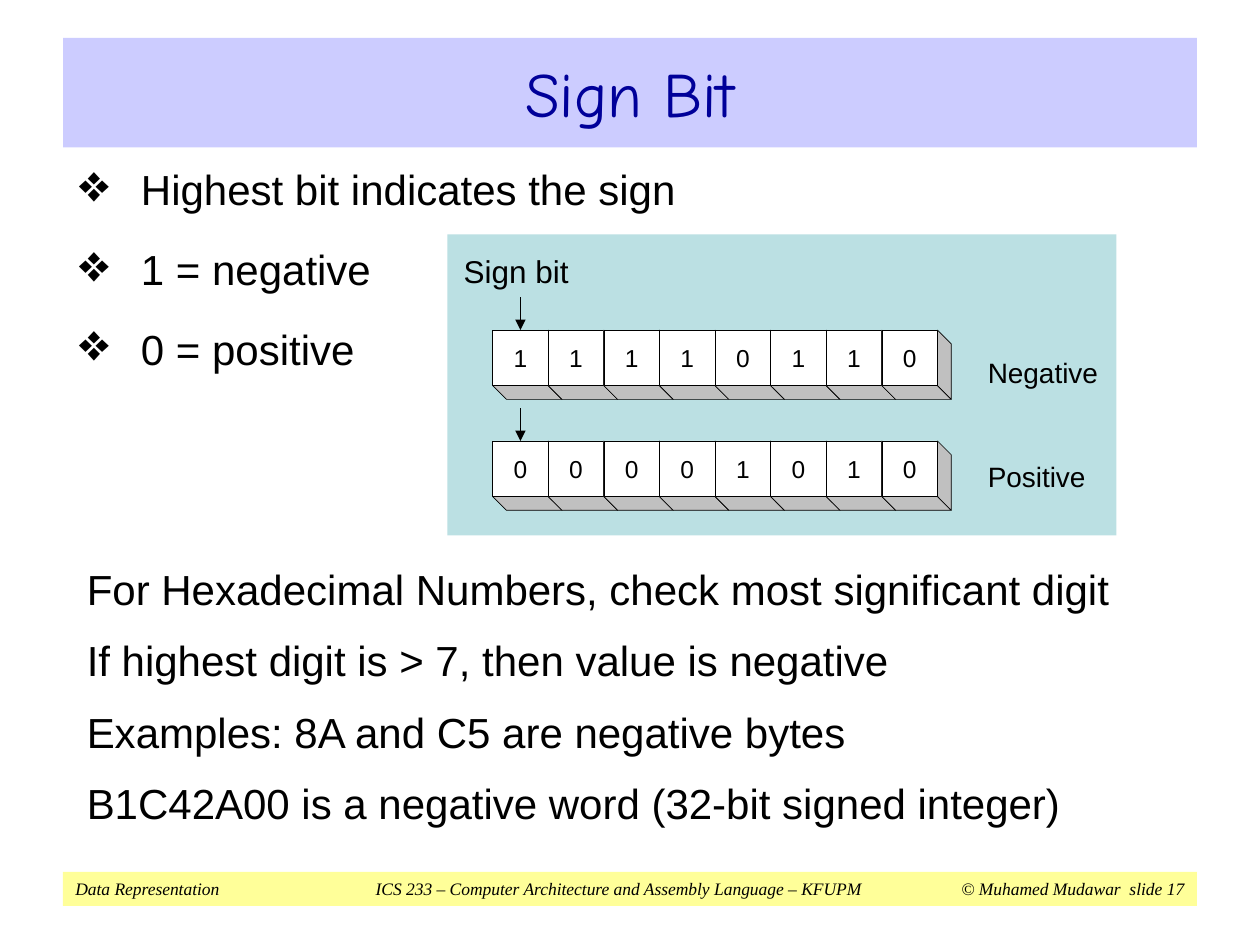
from dataclasses import dataclass

from lxml.etree import SubElement
from pptx import Presentation
from pptx.dml.color import RGBColor
from pptx.enum.shapes import MSO_CONNECTOR, MSO_SHAPE
from pptx.enum.text import MSO_ANCHOR, PP_ALIGN
from pptx.oxml.ns import qn
from pptx.util import Inches, Pt


@dataclass(frozen=True)
class Theme:
    """Colours, fonts and type sizes of the slide."""
    ink: str = "000000"
    title_ink: str = "000099"
    title_band: str = "CCCCFF"
    footer_band: str = "FFFF99"
    panel: str = "BBE0E3"
    cell: str = "FFFFFF"
    cell_side: str = "C0C0C0"
    font: str = "Arial"
    title_font: str = "Comic Neue"
    footer_font: str = "Times New Roman"
    title_size: int = 36
    body_size: int = 24
    caption_size: int = 18
    label_size: int = 16
    bit_size: int = 14
    footer_size: int = 10
    cell_line: float = 0.38
    arrow_line: float = 0.75


THEME = Theme()


def paint(shape, fill, line=None):
    """Give a shape its fill and outline, without a shadow."""
    shape.shadow.inherit = False
    shape.fill.solid()
    shape.fill.fore_color.rgb = RGBColor.from_string(fill)
    if line is None:
        shape.line.fill.background()
    else:
        shape.line.color.rgb = RGBColor.from_string(line)
        shape.line.width = Pt(THEME.cell_line)


def add_rectangle(page, box, fill, line=None):
    """Add a painted rectangle."""
    shape = page.shapes.add_shape(MSO_SHAPE.RECTANGLE, *map(Inches, box))
    paint(shape, fill, line)
    return shape


def add_face(page, points, fill):
    """Add a closed outline through the given points."""
    start, *rest = [(Inches(x), Inches(y)) for x, y in points]
    builder = page.shapes.build_freeform(*start)
    builder.add_line_segments(rest, close=True)
    paint(builder.convert_to_shape(), fill, THEME.ink)


def write(frame, lines, size, font=THEME.font, color=THEME.ink, align=PP_ALIGN.LEFT, gap=0):
    """Write formatted paragraphs into a text frame."""
    frame.text = "\n".join(lines)
    for para in frame.paragraphs:
        para.alignment = align
        para.space_before = Pt(gap)
        for span in para.runs:
            span.font.size = Pt(size)
            span.font.name = font
            span.font.color.rgb = RGBColor.from_string(color)


def set_margins(frame, horizontal, vertical):
    """Set the inner margins of a text frame."""
    frame.margin_left = frame.margin_right = Inches(horizontal)
    frame.margin_top = frame.margin_bottom = Inches(vertical)


def add_text(page, box, lines, size, margins=(0, 0), gap=0):
    """Add a text box and return its frame."""
    frame = page.shapes.add_textbox(*map(Inches, box)).text_frame
    frame.word_wrap = True
    set_margins(frame, *margins)
    write(frame, lines, size, gap=gap)
    return frame


def place_title(page, box, text):
    """Move and format the title placeholder."""
    title = page.shapes.title
    title.left, title.top, title.width, title.height = map(Inches, box)
    paint(title, THEME.title_band)
    title.text_frame.vertical_anchor = MSO_ANCHOR.MIDDLE
    write(title.text_frame, [text], THEME.title_size, THEME.title_font,
          THEME.title_ink, PP_ALIGN.CENTER)


def place_footer(page, box, parts):
    """Place the footer band with left, centred and right-aligned parts."""
    frame = add_rectangle(page, box, THEME.footer_band).text_frame
    frame.vertical_anchor = MSO_ANCHOR.MIDDLE
    write(frame, ["\t".join(parts)], THEME.footer_size, THEME.footer_font)
    para = frame.paragraphs[0]
    for span in para.runs:
        span.font.italic = True
    tabs = SubElement(para._p.get_or_add_pPr(), qn("a:tabLst"))
    for position, kind in ((4.31, "ctr"), (8.8, "r")):
        SubElement(tabs, qn("a:tab"), pos=str(Inches(position)), algn=kind)


def place_bullets(page, box, lines):
    """Place the bulleted list."""
    frame = add_text(page, box, lines, THEME.body_size, (0.1, 0.05), gap=16.8)
    indent = Inches(0.49)
    for para in frame.paragraphs:
        properties = para._p.get_or_add_pPr()
        properties.set("marL", str(indent))
        properties.set("indent", str(-indent))
        SubElement(properties, qn("a:buSzPct"), val="125000")
        SubElement(properties, qn("a:buChar"), char="❖")


def add_arrow_down(page, cell, length):
    """Add an arrow that ends at the top middle of a cell."""
    middle = cell.left + cell.width // 2
    arrow = page.shapes.add_connector(
        MSO_CONNECTOR.STRAIGHT, middle, cell.top - Inches(length), middle, cell.top)
    arrow.end_connect(cell, 0)
    arrow.line.color.rgb = RGBColor.from_string(THEME.ink)
    arrow.line.width = Pt(THEME.arrow_line)
    properties = arrow._element.spPr
    SubElement(properties.find(qn("a:ln")), qn("a:tailEnd"), type="triangle")
    SubElement(properties, qn("a:effectLst"))


def place_bit_row(page, box, bits):
    """Place a row of raised cells, with an arrow to the sign bit."""
    left, top, width, height = box
    depth = 0.11
    step = width / len(bits)
    bottom = top + height
    cells = []
    for index, bit in enumerate(bits):
        x = left + index * step
        right = x + step
        add_face(page, [(right, bottom), (x, bottom), (x + depth, bottom + depth),
                        (right + depth, bottom + depth)], THEME.cell_side)
        add_face(page, [(right + depth, bottom + depth), (right, bottom), (right, top),
                        (right + depth, top + depth)], THEME.cell_side)
        cell = add_rectangle(page, (x, top, step, height), THEME.cell, THEME.ink)
        set_margins(cell.text_frame, 0, 0)
        cell.text_frame.vertical_anchor = MSO_ANCHOR.MIDDLE
        write(cell.text_frame, [bit], THEME.bit_size, align=PP_ALIGN.CENTER)
        cells.append(cell)
    add_arrow_down(page, cells[0], 0.26)


def place_sign_panel(page, box):
    """Place the panel that compares a negative and a positive byte."""
    left, top, _, _ = box
    add_rectangle(page, box, THEME.panel)
    add_text(page, (left + 0.13, top + 0.14, 0.95, 0.3), ["Sign bit"], THEME.caption_size)
    rows = (("11110110", 0.76, "Negative", 0.96), ("00001010", 1.64, "Positive", 1.79))
    for bits, row_top, label, label_top in rows:
        place_bit_row(page, (left + 0.36, top + row_top, 3.53, 0.44), bits)
        add_text(page, (left + 4.29, top + label_top, 0.97, 0.27), [label],
                 THEME.label_size)


def place_notes(page, box, lines):
    """Place the plain paragraphs under the panel."""
    add_text(page, box, lines, THEME.body_size, (0.1, 0.15), gap=12)


def main():
    """Build the deck and save it."""
    deck = Presentation()
    deck.slide_width, deck.slide_height = Inches(10), Inches(7.5)
    page = deck.slides.add_slide(deck.slide_layouts[5])
    place_footer(page, (0.5, 6.92, 9, 0.27), [
        "Data Representation",
        "ICS 233 – Computer Architecture and Assembly Language – KFUPM",
        "© Muhamed Mudawar  slide 17"])
    place_title(page, (0.5, 0.3, 9, 0.87), "Sign Bit")
    place_bullets(page, (0.53, 1.25, 8.89, 2.69), [
        "Highest bit indicates the sign", "1 = negative", "0 = positive"])
    place_notes(page, (0.59, 4.32, 8.82, 2.49), [
        "For Hexadecimal Numbers, check most significant digit",
        "If highest digit is > 7, then value is negative",
        "Examples: 8A and C5 are negative bytes",
        "B1C42A00 is a negative word (32-bit signed integer)"])
    place_sign_panel(page, (3.55, 1.86, 5.31, 2.39))
    deck.save("out.pptx")


if __name__ == "__main__":
    main()
